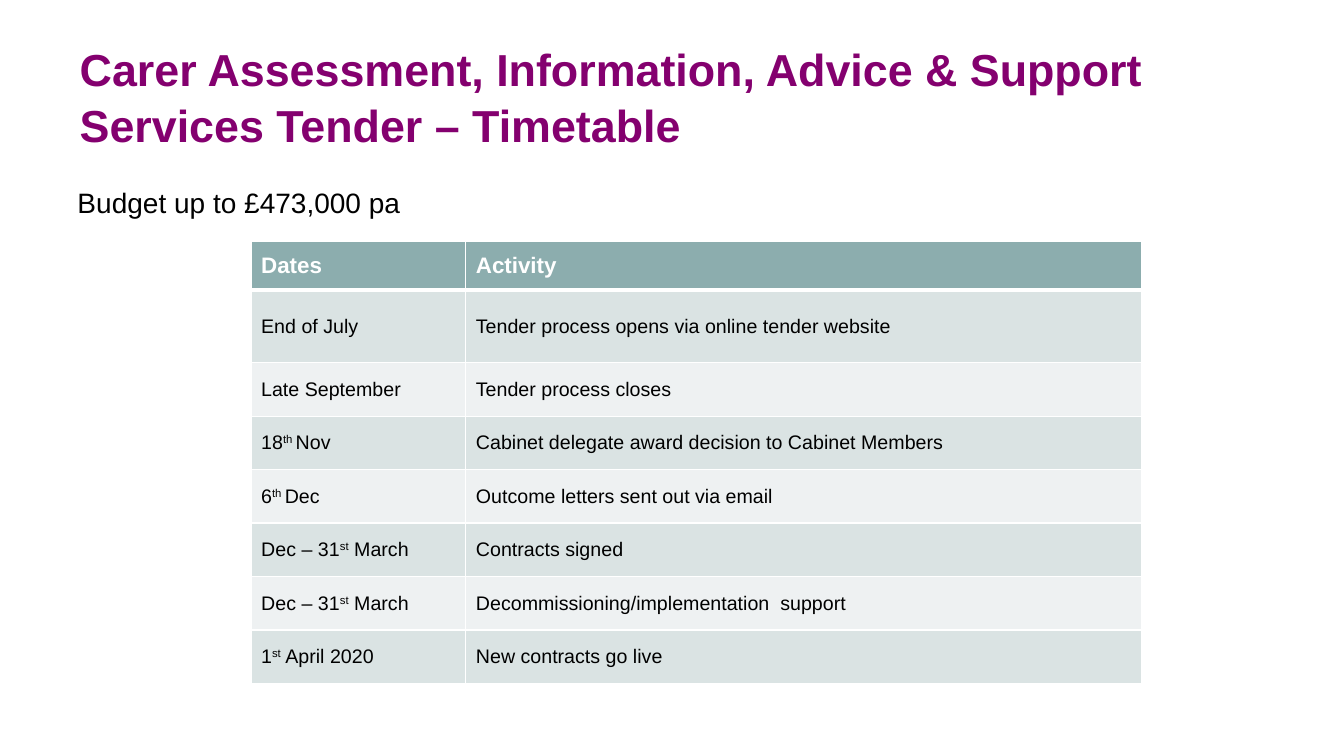
from dataclasses import dataclass

from lxml import etree
from pptx import Presentation
from pptx.dml.color import RGBColor
from pptx.enum import text
from pptx.oxml import ns
from pptx.util import Inches, Pt


@dataclass(frozen=True)
class Theme:
    font: str = "Arial"
    plum: str = "84006F"
    black: str = "000000"
    white: str = "FFFFFF"
    teal: str = "8CADAE"
    bands: tuple = ("DAE3E3", "EEF1F2")
    title: int = 32
    note: int = 20
    head: int = 16
    cell: int = 14


THEME = Theme()
WIDTHS = (2.13, 6.7)
HEIGHTS = (0.49, 0.72) + (0.53,) * 6
# Carets enclose raised letters.
ROWS = (
    ("Dates", "Activity"),
    ("End of July", "Tender process opens via online tender website"),
    ("Late September", "Tender process closes"),
    ("18^th ^Nov", "Cabinet delegate award decision to Cabinet Members"),
    ("6^th ^Dec", "Outcome letters sent out via email"),
    ("Dec – 31^st^ March", "Contracts signed"),
    ("Dec – 31^st^ March", "Decommissioning/implementation  support"),
    ("1^st^ April 2020", "New contracts go live"),
)


def place(shape, box):
    shape.left, shape.top, shape.width, shape.height = map(Inches, box)


def style(para, size, color, bold=False):
    para.alignment = text.PP_ALIGN.LEFT
    para.font.name = THEME.font
    para.font.size = Pt(size)
    para.font.bold = bold
    para.font.color.rgb = RGBColor.from_string(color)


def add_title(slide, box):
    title = slide.shapes.title
    place(title, box)
    frame = title.text_frame
    frame.text = ("Carer Assessment, Information, Advice & Support "
                  "Services Tender – Timetable")
    frame.word_wrap = True
    frame.auto_size = text.MSO_AUTO_SIZE.NONE
    frame.vertical_anchor = text.MSO_ANCHOR.MIDDLE
    frame.margin_left = frame.margin_right = Inches(0.12)
    frame.margin_top = frame.margin_bottom = Inches(0.06)
    para = frame.paragraphs[0]
    para.line_spacing = 1.05
    style(para, THEME.title, THEME.plum, True)


def add_budget(slide, box):
    frame = slide.shapes.add_textbox(*map(Inches, box)).text_frame
    frame.word_wrap = True
    frame.text = "Budget up to £473,000 pa"
    style(frame.paragraphs[0], THEME.note, THEME.black)


def add_borders(cell, bottom):
    """Draw white cell edges, with the given bottom width in points."""
    props = cell._tc.get_or_add_tcPr()
    edges = (("lnL", 1), ("lnR", 1), ("lnT", 1), ("lnB", bottom))
    for spot, (tag, width) in enumerate(edges):
        line = etree.Element(ns.qn(f"a:{tag}"), w=str(Pt(width)))
        fill = etree.SubElement(line, ns.qn("a:solidFill"))
        etree.SubElement(fill, ns.qn("a:srgbClr"), val=THEME.white)
        props.insert(spot, line)


def fill_cell(cell, words, row):
    head = row == 0
    cell.vertical_anchor = text.MSO_ANCHOR.MIDDLE
    cell.fill.solid()
    color = THEME.teal if head else THEME.bands[(row - 1) % 2]
    cell.fill.fore_color.rgb = RGBColor.from_string(color)
    add_borders(cell, 3 if head else 1)
    para = cell.text_frame.paragraphs[0]
    for index, part in enumerate(words.split("^")):
        run = para.add_run()
        run.text = part
        if index % 2:
            run.font._element.set("baseline", "30000")
    if head:
        style(para, THEME.head, THEME.white, True)
    else:
        style(para, THEME.cell, THEME.black)


def add_dates(slide, left, top):
    box = map(Inches, (left, top, sum(WIDTHS), sum(HEIGHTS)))
    table = slide.shapes.add_table(len(ROWS), len(WIDTHS), *box).table
    table.horz_banding = False
    for col, width in zip(table.columns, WIDTHS):
        col.width = Inches(width)
    for row, height in zip(table.rows, HEIGHTS):
        row.height = Inches(height)
    for row, line in enumerate(ROWS):
        for col, words in enumerate(line):
            fill_cell(table.cell(row, col), words, row)


def main():
    deck = Presentation()
    deck.slide_width, deck.slide_height = Inches(13.33), Inches(7.5)
    slide = deck.slides.add_slide(deck.slide_layouts.get_by_name("Title Only"))
    add_title(slide, (0.67, 0.32, 12, 1.25))
    add_dates(slide, 2.49, 2.39)
    add_budget(slide, (0.67, 1.79, 3.45, 0.44))
    deck.save("out.pptx")


if __name__ == "__main__":
    main()
